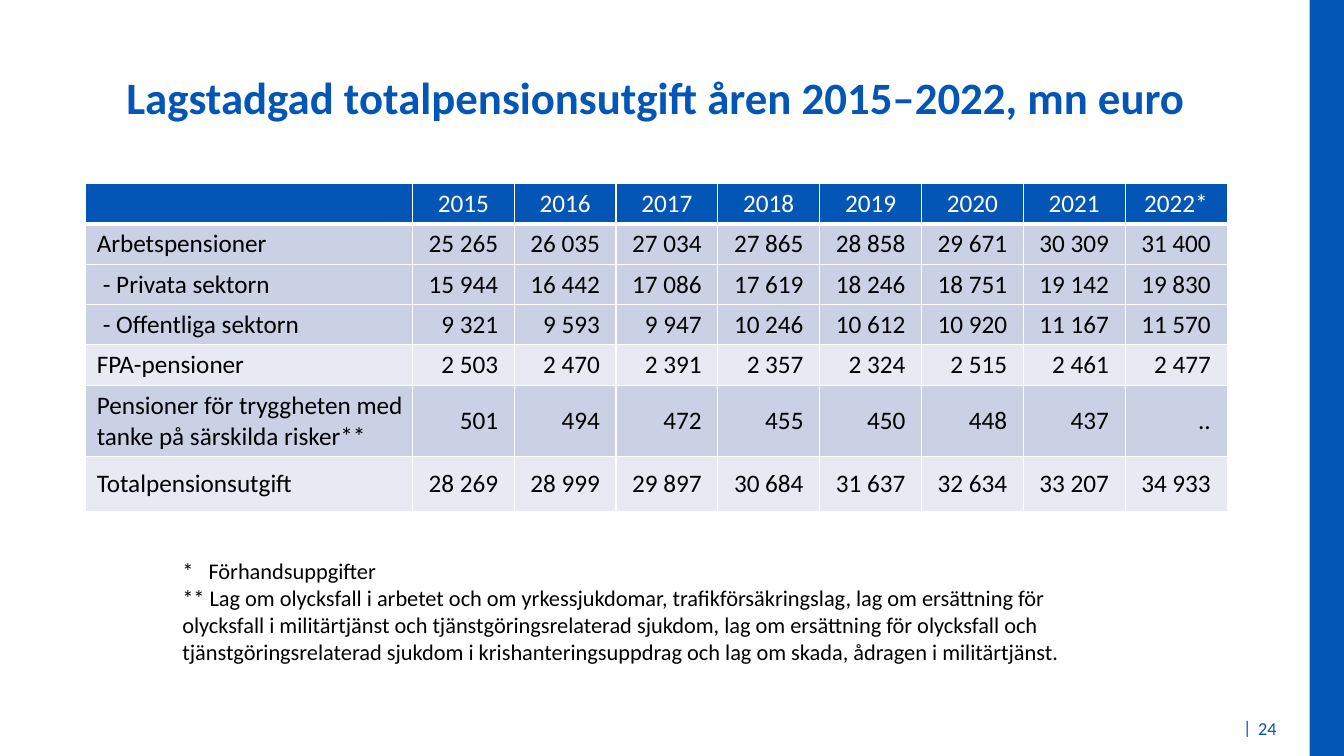
from dataclasses import dataclass
from typing import Any

from lxml.etree import SubElement
from pptx import Presentation
from pptx.dml.color import RGBColor
from pptx.enum.shapes import MSO_SHAPE
from pptx.enum.text import MSO_ANCHOR, PP_ALIGN
from pptx.oxml import parse_xml
from pptx.oxml.ns import nsdecls, qn
from pptx.util import Pt

PX = 9144  # EMU; 100 px to the inch


@dataclass(frozen=True)
class Theme:
    font: str = "Calibri"
    blue: str = "0356B5"
    black: str = "000000"
    white: str = "FFFFFF"
    band: str = "CBD1E5"
    pale: str = "E7E9F3"
    title: int = 32
    table: int = 18
    note: int = 16
    page: int = 13


@dataclass(frozen=True)
class TextBox:
    box: tuple[int, int, int, int]
    lines: tuple[str, ...]
    size: int
    color: str
    bold: bool = False
    align: PP_ALIGN = PP_ALIGN.LEFT
    anchor: MSO_ANCHOR = MSO_ANCHOR.TOP
    wrap: bool = True
    tab: int = 0


@dataclass(frozen=True)
class Row:
    label: str
    values: str
    fill: str
    height: int = 40
    indent: int = 12


THEME = Theme()

TEXTS = (
    TextBox((1223, 706, 29, 35), ("|",), THEME.page, THEME.blue, wrap=False),
    TextBox((2, 60, 1297, 71), ("Lagstadgad totalpensionsutgift åren 2015–2022, mn euro",),
            THEME.title, THEME.blue, True, PP_ALIGN.CENTER, MSO_ANCHOR.MIDDLE),
    TextBox((1238, 705, 44, 35), ("24",), THEME.page, THEME.blue, anchor=MSO_ANCHOR.MIDDLE),
    TextBox((171, 548, 921, 118), (
        "*\tFörhandsuppgifter",
        "** Lag om olycksfall i arbetet och om yrkessjukdomar, trafikförsäkringslag, "
        "lag om ersättning för olycksfall i militärtjänst och tjänstgöringsrelaterad sjukdom, "
        "lag om ersättning för olycksfall och tjänstgöringsrelaterad sjukdom i "
        "krishanteringsuppdrag och lag om skada, ådragen i militärtjänst.",
    ), THEME.note, THEME.black, tab=26),
)

ROWS = (
    Row("", "2015|2016|2017|2018|2019|2020|2021|2022*", THEME.blue),
    Row("Arbetspensioner",
        "25 265|26 035|27 034|27 865|28 858|29 671|30 309|31 400", THEME.band),
    Row("- Privata sektorn",
        "15 944|16 442|17 086|17 619|18 246|18 751|19 142|19 830", THEME.band, indent=18),
    Row("- Offentliga sektorn",
        "9 321|9 593|9 947|10 246|10 612|10 920|11 167|11 570", THEME.band, indent=18),
    Row("FPA-pensioner",
        "2 503|2 470|2 391|2 357|2 324|2 515|2 461|2 477", THEME.pale),
    Row("Pensioner för tryggheten med tanke på särskilda risker**",
        "501|494|472|455|450|448|437|..", THEME.band, 71),
    Row("Totalpensionsutgift",
        "28 269|28 999|29 897|30 684|31 637|32 634|33 207|34 933", THEME.pale, 54),
)
WIDTHS = (325, *[101] * 8)


def px(*lengths: int) -> list[int]:
    return [length * PX for length in lengths]


def apply(target: Any, values: dict[str, Any]) -> None:
    for name, value in values.items():
        setattr(target, name, value)


def style_font(font: Any, size: int, color: str, bold: bool = False) -> None:
    apply(font, {"name": THEME.font, "size": Pt(size), "bold": bold})
    font.color.rgb = RGBColor.from_string(color)


def add_text(shapes: Any, item: TextBox) -> None:
    tf = shapes.add_textbox(*px(*item.box)).text_frame
    apply(tf, {"word_wrap": item.wrap, "vertical_anchor": item.anchor})
    for i, line in enumerate(item.lines):
        p = tf.add_paragraph() if i else tf.paragraphs[0]
        p.alignment = item.align
        if item.tab:
            tabs = SubElement(p._p.get_or_add_pPr(), qn("a:tabLst"))
            SubElement(tabs, qn("a:tab"), pos=str(item.tab * PX), algn="l")
        r = p.add_run()
        r.text = line
        style_font(r.font, item.size, item.color, item.bold)


def set_borders(cell: Any, widths: dict[str, float]) -> None:
    """Draw white cell edges; widths are points keyed by L, R, T, B in that order."""
    for i, (side, width) in enumerate(widths.items()):
        cell._tc.get_or_add_tcPr().insert(i, parse_xml(
            f'<a:ln{side} {nsdecls("a")} w="{Pt(width)}"><a:solidFill>'
            f'<a:srgbClr val="{THEME.white}"/></a:solidFill></a:ln{side}>'))


def add_pension_table(shapes: Any) -> None:
    heights = [row.height for row in ROWS]
    box = px(84, 182, sum(WIDTHS), sum(heights))
    table = shapes.add_table(len(ROWS), len(WIDTHS), *box).table
    apply(table, {"first_row": False, "horz_banding": False})
    for column, width in zip(table.columns, WIDTHS):
        column.width = width * PX
    last_row, last_col = len(ROWS) - 1, len(WIDTHS) - 1
    for y, row in enumerate(ROWS):
        table.rows[y].height = row.height * PX
        for x, text in enumerate((row.label, *row.values.split("|"))):
            if y == 0:
                left, right, align, color = 10, 10, PP_ALIGN.CENTER, THEME.white
            elif x == 0:
                left, right, align, color = row.indent, 4, PP_ALIGN.LEFT, THEME.black
            else:
                left, right, align, color = 4, 16, PP_ALIGN.RIGHT, THEME.black
            cell = table.cell(y, x)
            apply(cell, {"text": text, "vertical_anchor": MSO_ANCHOR.MIDDLE,
                         "margin_left": left * PX, "margin_right": right * PX,
                         "margin_top": 5 * PX, "margin_bottom": 5 * PX})
            p = cell.text_frame.paragraphs[0]
            p.alignment = align
            for r in p.runs:
                style_font(r.font, THEME.table, color)
            cell.fill.solid()
            cell.fill.fore_color.rgb = RGBColor.from_string(row.fill)
            set_borders(cell, {
                "L": 1 if x else 0.25,
                "R": 1 if x < last_col else 0.25,
                "T": 1 if y else 0.25,
                "B": 3 if y == 0 else 1 if y < last_row else 0.25,
            })


def add_side_band(shapes: Any) -> None:
    sp = shapes.add_shape(MSO_SHAPE.RECTANGLE, *px(1299, 0, 34, 750))
    sp.shadow.inherit = False
    sp.fill.solid()
    sp.fill.fore_color.rgb = RGBColor.from_string(THEME.blue)
    sp.line.fill.background()


def main() -> None:
    prs = Presentation()
    apply(prs, {"slide_width": 1333 * PX, "slide_height": 750 * PX})
    s = prs.slides.add_slide(prs.slide_layouts[6])
    add_side_band(s.shapes)
    for item in TEXTS:
        add_text(s.shapes, item)
    add_pension_table(s.shapes)
    prs.save("out.pptx")


if __name__ == "__main__":
    main()
